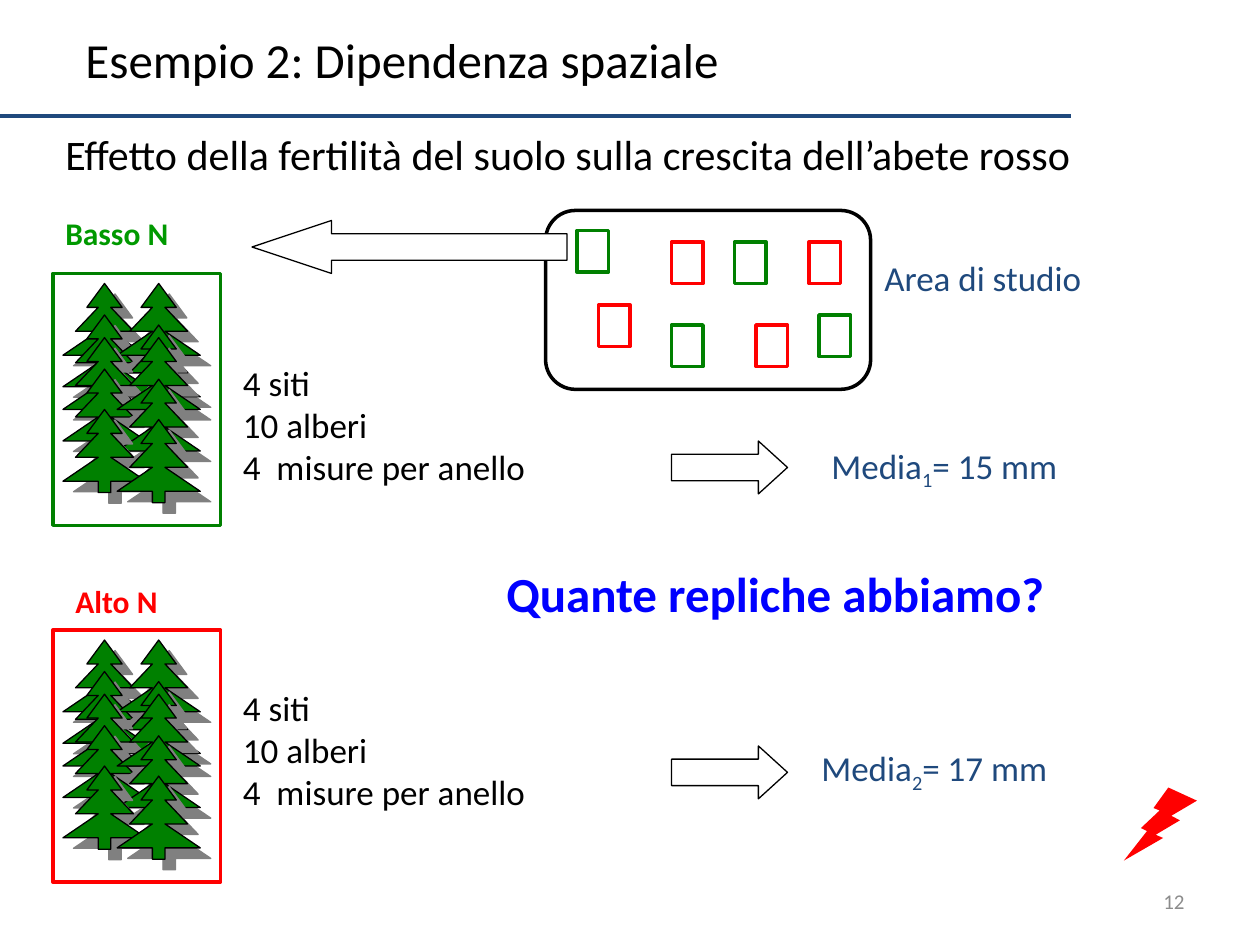
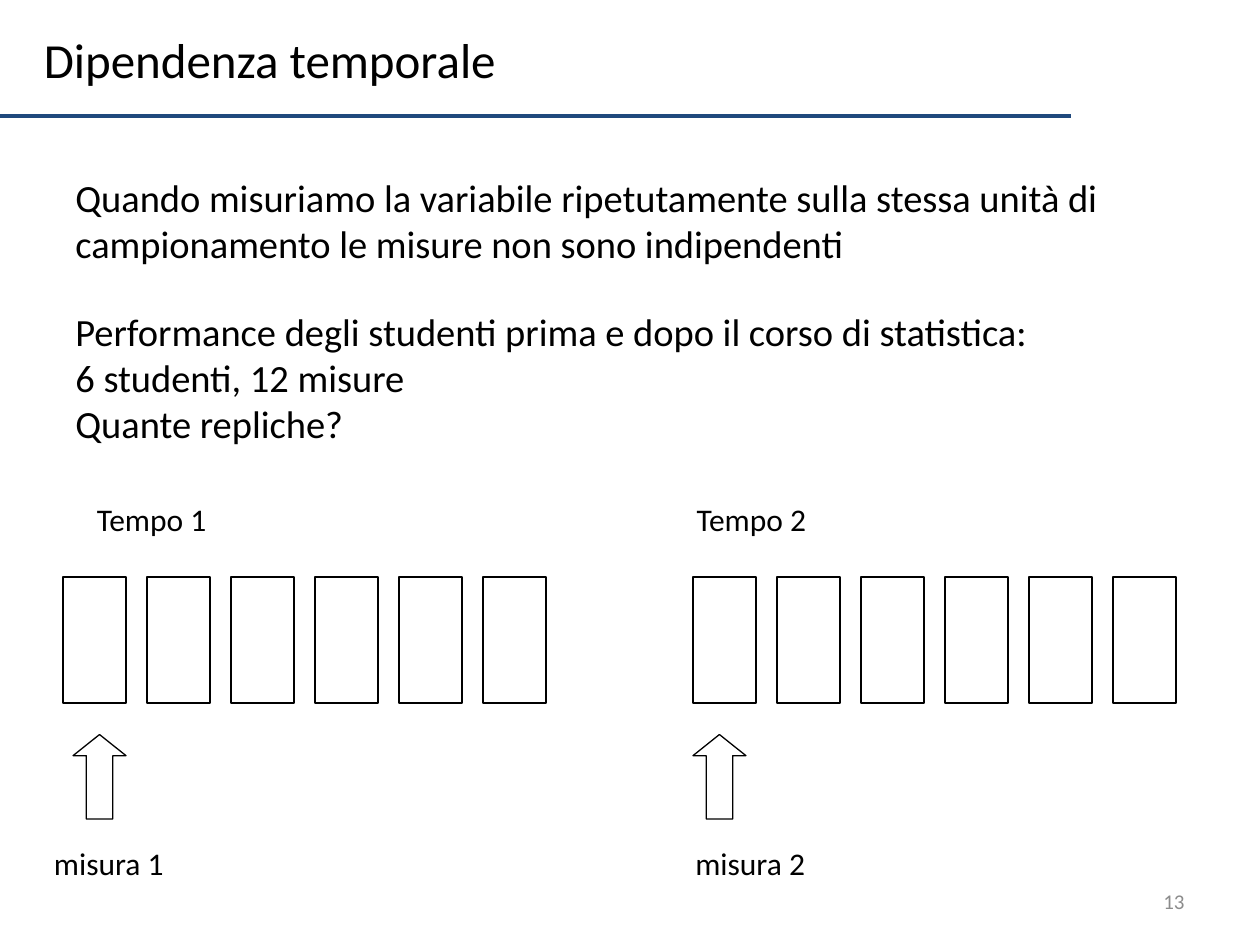
from lxml.etree import SubElement
from pptx import Presentation
from pptx.dml.color import RGBColor
from pptx.enum.shapes import MSO_CONNECTOR, MSO_SHAPE
from pptx.enum.text import MSO_ANCHOR, PP_ALIGN
from pptx.oxml.ns import qn
from pptx.util import Inches, Pt

COLORS = {
    "black": "000000", "white": "FFFFFF", "navy": "1F497D", "blue": "0000FF",
    "red": "FF0000", "green": "008000", "label_green": "009900",
    "grey": "8C8C8C", "shadow": "808080",
}
FONT = "Calibri"
HALF_TREE = [(0, 0), (0.14, 0.19), (0.05, 0.19), (0.23, 0.38), (0.05, 0.38),
             (0.33, 0.57), (0.05, 0.57), (0.05, 0.66)]
TREE_OFFSETS = [(0.41, 0.08), (0.41, 0.33), (0.84, 0.08), (0.84, 0.41),
                (0.41, 0.51), (0.41, 0.76), (0.84, 0.51), (0.84, 0.84),
                (0.41, 1.08), (0.84, 1.16)]
PLOTS = {
    "green": [(4.58, 1.83), (5.33, 2.58), (6.5, 2.5), (5.83, 1.92)],
    "red": [(4.75, 2.42), (5.33, 1.92), (6.42, 1.92), (6, 2.58)],
}
SAMPLING = ["4 siti", "10 alberi", "4  misure per anello"]


def rgb(name):
    """Return the named colour."""
    return RGBColor.from_string(COLORS[name])


def add_text(s, box, lines, size, color="black", bold=False, anchor=MSO_ANCHOR.MIDDLE,
             align=PP_ALIGN.LEFT, wrap=True):
    """Add a text box with one paragraph per line and return its text frame."""
    tf = s.shapes.add_textbox(*map(Inches, box)).text_frame
    tf.word_wrap = wrap
    tf.vertical_anchor = anchor
    for i, line in enumerate(lines):
        p = tf.paragraphs[0] if i == 0 else tf.add_paragraph()
        p.text = line
        p.alignment = align
        p.font.name, p.font.size, p.font.bold = FONT, Pt(size), bold
        p.font.color.rgb = rgb(color)
    return tf


def add_label(s, box, text, color="black", bold=False, wrap=False):
    """Add a short top-anchored label."""
    add_text(s, box, [text], 18, color, bold, MSO_ANCHOR.TOP, wrap=wrap)


def paint(sp, fill, line, width):
    """Set the fill and outline of a shape, without shadow."""
    sp.shadow.inherit = False
    if fill:
        sp.fill.solid()
        sp.fill.fore_color.rgb = rgb(fill)
    else:
        sp.fill.background()
    if line:
        sp.line.color.rgb = rgb(line)
        sp.line.width = Pt(width)
    else:
        sp.line.fill.background()


def add_preset(s, kind, box, fill=None, line="black", width=0.75, adj=()):
    """Add a preset shape."""
    sp = s.shapes.add_shape(kind, *map(Inches, box))
    for i, value in enumerate(adj):
        sp.adjustments[i] = value
    paint(sp, fill, line, width)
    return sp


def add_tree(s, left, top):
    """Add a fir tree with a hard drop shadow."""
    mirrored = [(-x, y) for x, y in reversed(HALF_TREE[1:])]
    points = [(Inches(left + 0.33 + x), Inches(top + y)) for x, y in HALF_TREE + mirrored]
    fb = s.shapes.build_freeform(*points[0])
    fb.add_line_segments(points[1:], close=True)
    sp = fb.convert_to_shape()
    paint(sp, "green", "black", 0.75)
    effects = sp._element.spPr.find(qn("a:effectLst"))
    shadow = SubElement(effects, qn("a:outerShdw"), dist=str(Pt(8.5)), dir="2700000", algn="ctr")
    SubElement(shadow, qn("a:srgbClr"), val=COLORS["shadow"])


def add_stand(s, top, color):
    """Add a framed stand of trees."""
    add_preset(s, MSO_SHAPE.RECTANGLE, (0.42, top, 1.33, 2), line=color, width=2)
    for dx, dy in TREE_OFFSETS:
        add_tree(s, 0.09 + dx, top + dy)


def add_mean(s, left, top, index, value):
    """Add a mean with a subscript index."""
    tf = add_text(s, (left, top, 3.08, 0.43), ["Media"], 20, "navy")
    p = tf.paragraphs[0]
    r = p.add_run()
    r.text = index
    r._r.get_or_add_rPr().set("baseline", "-25000")
    p.add_run().text = f"= {value} mm"


def add_base(prs, title, left, width, number):
    """Add a slide with its title, rule and page number."""
    s = prs.slides.add_slide(prs.slide_layouts[6])
    add_text(s, (left, 0.18, width, 0.57), [title], 28, wrap=False)
    rule = s.shapes.add_connector(MSO_CONNECTOR.STRAIGHT, 0, Inches(0.92), Inches(8.5), Inches(0.92))
    rule.line.color.rgb = rgb("navy")
    rule.line.width = Pt(2)
    SubElement(rule._element.spPr, qn("a:effectLst"))
    add_text(s, (7.17, 6.95, 2.33, 0.4), [str(number)], 12, "grey", align=PP_ALIGN.RIGHT)
    return s


def build_spatial(prs):
    """Build the slide on spatial dependence."""
    s = add_base(prs, "Esempio 2: Dipendenza spaziale", 0.58, 5.28, 12)
    add_text(s, (0.42, 0.97, 9.08, 0.5),
             ["Effetto della fertilità del suolo sulla crescita dell’abete rosso"], 24)
    add_label(s, (0.42, 1.65, 2.5, 0.4), "Basso N", "label_green", True, True)
    add_label(s, (0.5, 4.57, 2.5, 0.4), "Alto N", "red", True, True)
    for top, color, text_top, arrow_top in ((2.17, "green", 2.82, 3.5), (5, "red", 5.4, 5.92)):
        add_stand(s, top, color)
        add_text(s, (1.83, text_top, 4.08, 1.1), SAMPLING, 20)
        add_preset(s, MSO_SHAPE.RIGHT_ARROW, (5.33, arrow_top, 0.92, 0.42), "white", adj=(0.5, 0.55))
    add_mean(s, 6.5, 3.5, "1", 15)
    add_mean(s, 6.42, 5.9, "2", 17)
    add_text(s, (3.92, 4.42, 4.52, 0.57), ["Quante repliche abbiamo?"], 28, "blue", True,
             MSO_ANCHOR.TOP, wrap=False)
    for color, corners in PLOTS.items():
        for left, top in corners:
            add_preset(s, MSO_SHAPE.RECTANGLE, (left, top, 0.25, 0.33), line=color, width=2)
    add_preset(s, MSO_SHAPE.ROUNDED_RECTANGLE, (4.33, 1.67, 2.58, 1.42), width=2, adj=(0.167,))
    add_text(s, (6.92, 1.98, 2.67, 0.44), ["Area di studio"], 20, "navy")
    sp = add_preset(s, MSO_SHAPE.RIGHT_ARROW, (2, 1.75, 2.5, 0.42), "white", adj=(0.5, 1.5))
    sp.rotation = 180
    bolt = add_preset(s, MSO_SHAPE.LIGHTNING_BOLT, (8.92, 6.25, 0.58, 0.58), "red", None)
    bolt._element.spPr.find(qn("a:xfrm")).set("flipH", "1")


def build_temporal(prs):
    """Build the slide on temporal dependence."""
    s = add_base(prs, "Dipendenza temporale", 0.25, 3.82, 13)
    add_text(s, (0.5, 1.33, 8.75, 0.84),
             ["Quando misuriamo la variabile ripetutamente sulla stessa unità di "
              "campionamento le misure non sono indipendenti"], 22)
    add_text(s, (0.5, 2.39, 8.75, 1.21),
             ["Performance degli studenti prima e dopo il corso di statistica:",
              "6 studenti, 12 misure", "Quante repliche?"], 22)
    groups = ((0.5, 0.67, 0.58, 0.33), (5.5, 5.43, 5.5, 5.42))
    for time, (left, time_left, arrow_left, measure_left) in enumerate(groups, 1):
        add_label(s, (time_left, 3.92, 1.08, 0.4), f"Tempo {time}")
        for student in range(6):
            add_preset(s, MSO_SHAPE.RECTANGLE, (left + student * 2 / 3, 4.58, 0.5, 1))
        add_preset(s, MSO_SHAPE.UP_ARROW, (arrow_left, 5.83, 0.42, 0.67), adj=(0.5, 0.4))
        add_label(s, (measure_left, 6.65, 1.08, 0.4), f"misura {time}")


def main():
    """Build and save the presentation."""
    prs = Presentation()
    prs.slide_width, prs.slide_height = Inches(10), Inches(7.5)
    build_spatial(prs)
    build_temporal(prs)
    prs.save("out.pptx")


if __name__ == "__main__":
    main()
